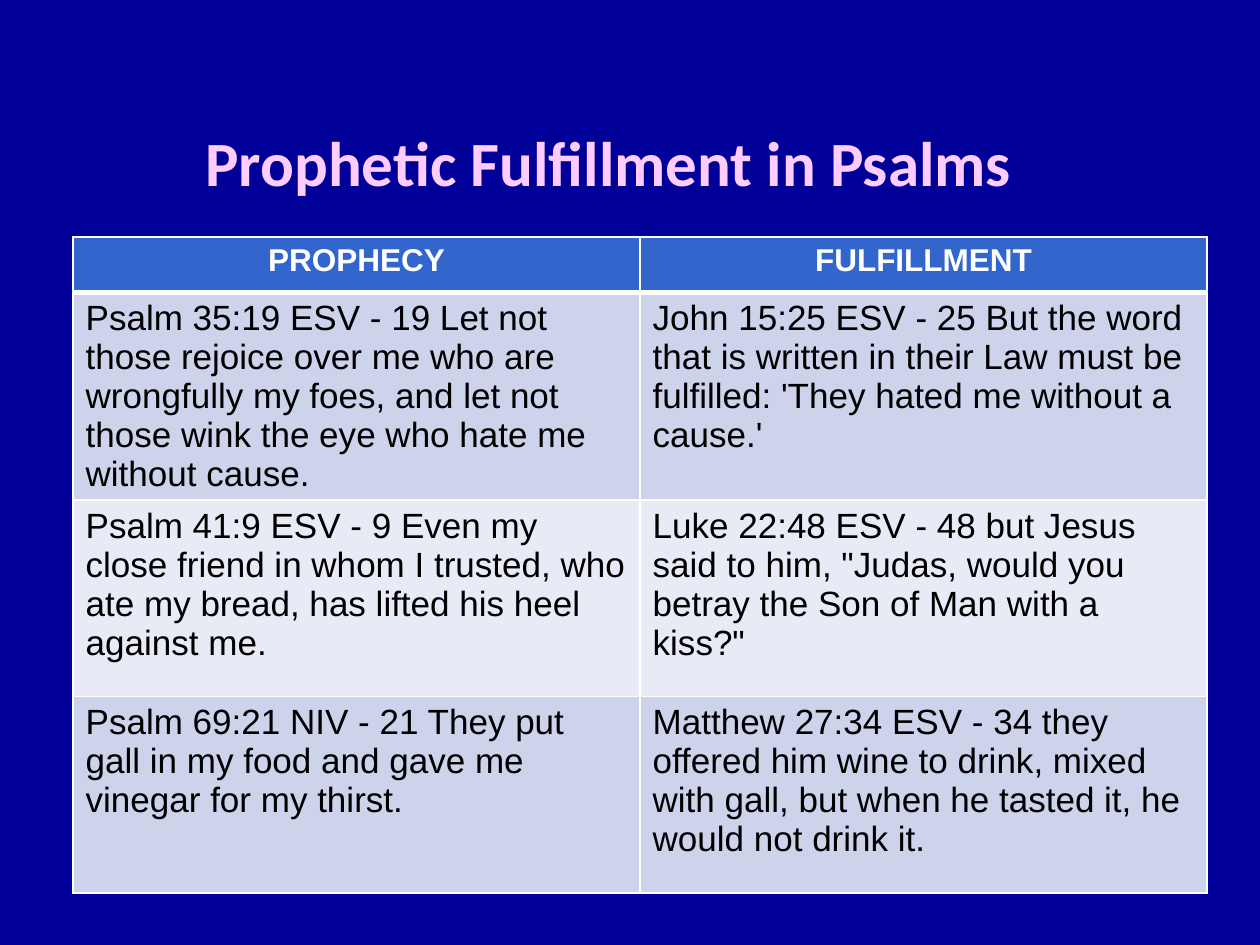
import pptx
import pptx.dml.color
import pptx.enum.text
import pptx.oxml.ns
import pptx.util
from lxml import etree

Inches = pptx.util.Inches
Pt = pptx.util.Pt
RGBColor = pptx.dml.color.RGBColor
CENTER = pptx.enum.text.PP_ALIGN.CENTER
LEFT = pptx.enum.text.PP_ALIGN.LEFT
MIDDLE = pptx.enum.text.MSO_ANCHOR.MIDDLE

NAVY = RGBColor(0x00, 0x00, 0x99)
PINK = RGBColor(0xFF, 0xCC, 0xFF)
WHITE = RGBColor(0xFF, 0xFF, 0xFF)
BLACK = RGBColor(0x00, 0x00, 0x00)
HEADER_BLUE = RGBColor(0x33, 0x66, 0xCC)
BAND_DARK = RGBColor(0xCE, 0xD3, 0xEC)
BAND_LIGHT = RGBColor(0xE8, 0xEA, 0xF6)

HEADER_HEIGHT = Inches(0.44)

ROWS = [
    ("PROPHECY", "FULFILLMENT"),
    ("Psalm 35:19 ESV - 19 Let not those rejoice over me who are wrongfully my foes, "
     "and let not those wink the eye who hate me without cause.",
     "John 15:25 ESV - 25 But the word that is written in their Law must be fulfilled: "
     "'They hated me without a cause.'"),
    ("Psalm 41:9 ESV - 9 Even my close friend in whom I trusted, who ate my bread, "
     "has lifted his heel against me.",
     "Luke 22:48 ESV - 48 but Jesus said to him, \"Judas, would you betray "
     "the Son of Man with a kiss?\""),
    ("Psalm 69:21 NIV - 21 They put gall in my food and gave me vinegar for my thirst.",
     "Matthew 27:34 ESV - 34 they offered him wine to drink, mixed with gall, "
     "but when he tasted it, he would not drink it."),
]


def write_text(text_frame, text, font_name, size, color, bold, alignment):
    paragraph = text_frame.paragraphs[0]
    paragraph.alignment = alignment
    run = paragraph.add_run()
    run.text = text
    run.font.name = font_name
    run.font.size = Pt(size)
    run.font.bold = bold
    run.font.color.rgb = color


def add_border(cell, side, width):
    properties = cell._tc.get_or_add_tcPr()
    qualified = pptx.oxml.ns.qn
    line = etree.SubElement(properties, qualified(f"a:ln{side}"), w=str(Pt(width)))
    fill = etree.SubElement(line, qualified("a:solidFill"))
    etree.SubElement(fill, qualified("a:srgbClr"), val=str(WHITE))


def place_title(slide, left, top, width, height):
    title = slide.shapes.title
    title.left, title.top, title.width, title.height = left, top, width, height
    title.text_frame.vertical_anchor = MIDDLE
    write_text(title.text_frame, "Prophetic Fulfillment in Psalms",
               "Calibri", 36, PINK, True, CENTER)


def format_cell(cell, text, row_index):
    is_header = row_index == 0
    # Borders come before the fill; the rule under the header is heavier
    for side in "LRTB":
        heavy = (row_index, side) in ((0, "B"), (1, "T"))
        add_border(cell, side, 3 if heavy else 1)
    cell.fill.solid()
    if is_header:
        cell.fill.fore_color.rgb = HEADER_BLUE
        write_text(cell.text_frame, text, "Arial", 18, WHITE, True, CENTER)
    else:
        cell.fill.fore_color.rgb = BAND_DARK if row_index % 2 else BAND_LIGHT
        write_text(cell.text_frame, text, "Arial", 20, BLACK, False, LEFT)


def place_table(slide, left, top, width, height):
    column_count = len(ROWS[0])
    table = slide.shapes.add_table(len(ROWS), column_count, left, top, width, height).table
    for column in table.columns:
        column.width = width // column_count
    body_height = (height - HEADER_HEIGHT) // (len(ROWS) - 1)
    for row_index, texts in enumerate(ROWS):
        table.rows[row_index].height = body_height if row_index else HEADER_HEIGHT
        for column_index, text in enumerate(texts):
            format_cell(table.cell(row_index, column_index), text, row_index)


def main():
    presentation = pptx.Presentation()
    presentation.slide_width = Inches(10)
    presentation.slide_height = Inches(7.5)

    # Title-only slide on a navy background
    slide = presentation.slides.add_slide(presentation.slide_layouts[5])
    slide.background.fill.solid()
    slide.background.fill.fore_color.rgb = NAVY

    place_title(slide, Inches(0.58), Inches(0.67), Inches(8.5), Inches(1.22))
    place_table(slide, Inches(0.58), Inches(1.88), Inches(9), Inches(5.12))
    presentation.save("out.pptx")


if __name__ == "__main__":
    main()
